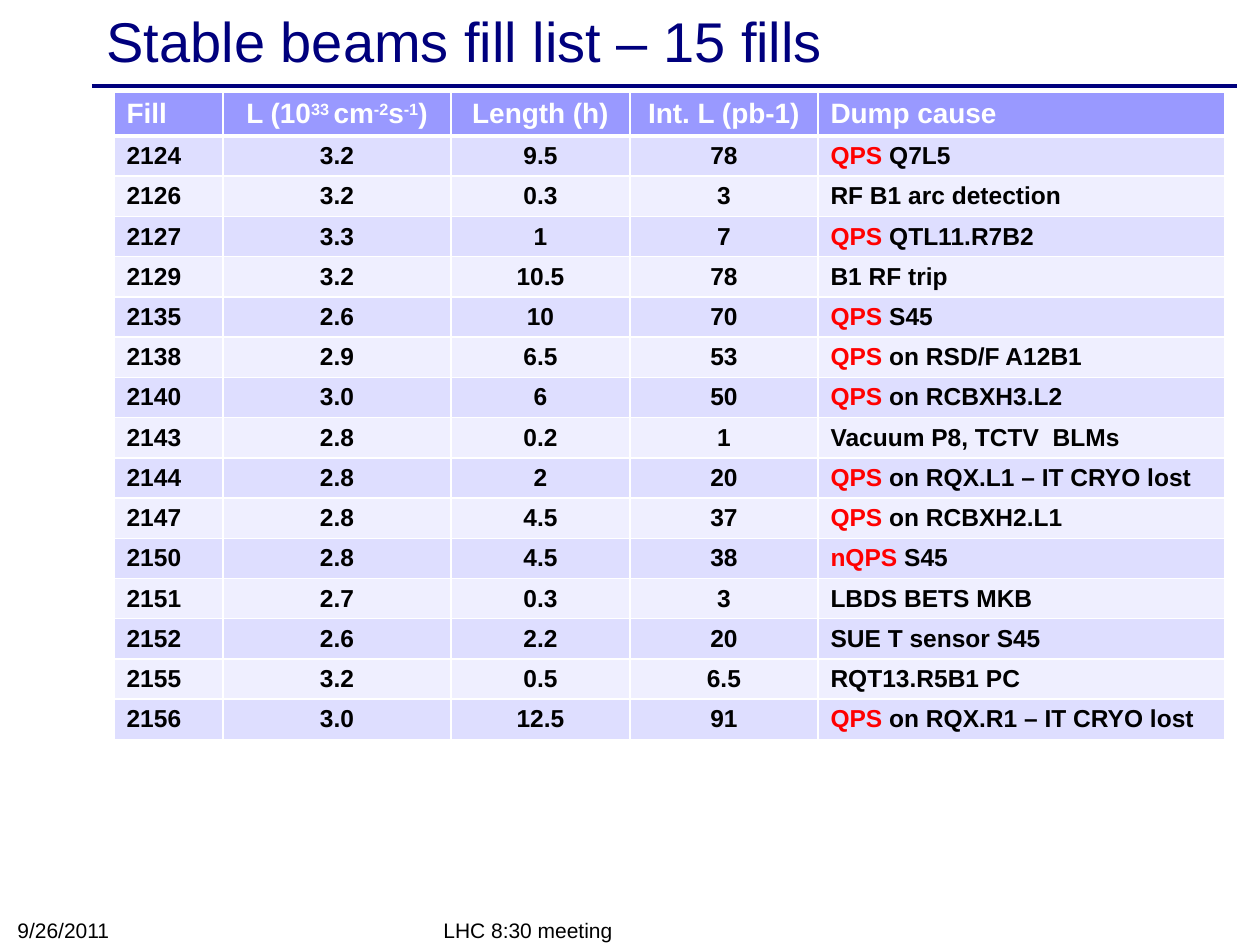
from lxml.etree import SubElement
from pptx import Presentation
from pptx.dml.color import RGBColor
from pptx.enum.shapes import MSO_CONNECTOR
from pptx.enum.text import MSO_ANCHOR, PP_ALIGN
from pptx.oxml.ns import qn
from pptx.util import Pt

PX = 914400 / 126
COLORS = {"navy": "00007D", "white": "FFFFFF", "black": "000000", "red": "FF0000",
          "header": "9999FF", "odd": "DEDEFF", "even": "EFEFFF"}
TITLE = {"size": Pt(32), "bold": False}
FOOTER = {"size": Pt(12), "bold": False}
HEADER = {"size": Pt(16), "bold": True}
BODY = {"size": Pt(14), "bold": True}

COLUMN_WIDTHS = [109, 228, 179, 188, 407]
ALIGNMENTS = [PP_ALIGN.LEFT] + [PP_ALIGN.CENTER] * 3 + [PP_ALIGN.LEFT]
HEADER_HEIGHT = 44
# Each heading is a list of (text, is superscript).
HEADINGS = [
    [("Fill", False)],
    [("L (10", False), ("33 ", True), ("cm", False), ("-2", True), ("s", False),
     ("-1", True), (")", False)],
    [("Length (h)", False)],
    [("Int. L (pb-1)", False)],
    [("Dump cause", False)],
]
FILLS = [
    ("2124", "3.2", "9.5", "78", "QPS Q7L5"),
    ("2126", "3.2", "0.3", "3", "RF B1 arc detection"),
    ("2127", "3.3", "1", "7", "QPS QTL11.R7B2"),
    ("2129", "3.2", "10.5", "78", "B1 RF trip"),
    ("2135", "2.6", "10", "70", "QPS S45"),
    ("2138", "2.9", "6.5", "53", "QPS on RSD/F A12B1"),
    ("2140", "3.0", "6", "50", "QPS on RCBXH3.L2"),
    ("2143", "2.8", "0.2", "1", "Vacuum P8, TCTV  BLMs"),
    ("2144", "2.8", "2", "20", "QPS on RQX.L1 – IT CRYO lost"),
    ("2147", "2.8", "4.5", "37", "QPS on RCBXH2.L1"),
    ("2150", "2.8", "4.5", "38", "nQPS S45"),
    ("2151", "2.7", "0.3", "3", "LBDS BETS MKB"),
    ("2152", "2.6", "2.2", "20", "SUE T sensor S45"),
    ("2155", "3.2", "0.5", "6.5", "RQT13.R5B1 PC"),
    ("2156", "3.0", "12.5", "91", "QPS on RQX.R1 – IT CRYO lost"),
]


def emu(px):
    return round(px * PX)


def rgb(name):
    return RGBColor.from_string(COLORS[name])


def add_run(p, text, style, color, superscript=False):
    r = p.add_run()
    r.text = text
    for name, value in {"name": "Arial", **style}.items():
        setattr(r.font, name, value)
    r.font.color.rgb = rgb(color)
    if superscript:
        r.font._element.set("baseline", "30000")


def add_title(s, text, x, y, w, h):
    """Place the title and the rule that runs below it."""
    sp = s.shapes.title
    for name, value in zip(("left", "top", "width", "height"), (x, y, w, h)):
        setattr(sp, name, emu(value))
    tf = sp.text_frame
    tf.word_wrap = True
    tf.vertical_anchor = MSO_ANCHOR.MIDDLE
    p = tf.paragraphs[0]
    p.alignment = PP_ALIGN.LEFT
    add_run(p, text, TITLE, "navy")

    rule_y = emu(y + h + 10)
    rule = s.shapes.add_connector(MSO_CONNECTOR.STRAIGHT, emu(x - 2), rule_y,
                                  emu(x + w + 9), rule_y)
    rule.line.color.rgb = rgb("navy")
    rule.line.width = Pt(2)
    SubElement(rule._element.spPr, qn("a:effectLst"))


def add_footer(s, text, x, y, w, h):
    sp = s.shapes.add_textbox(*map(emu, (x, y, w, h)))
    tf = sp.text_frame
    tf.word_wrap = True
    tf.vertical_anchor = MSO_ANCHOR.BOTTOM
    add_run(tf.paragraphs[0], text, FOOTER, "black")


def set_borders(cell, widths):
    """Draw white borders; widths gives points for each side."""
    tcPr = cell._tc.get_or_add_tcPr()
    for side in "LRTB":
        ln = SubElement(tcPr, qn(f"a:ln{side}"), w=str(Pt(widths.get(side, 1))))
        fill = SubElement(ln, qn("a:solidFill"))
        SubElement(fill, qn("a:srgbClr"), val=COLORS["white"])


def format_cell(cell, fill, alignment, borders):
    """Format the cell and return its paragraph."""
    set_borders(cell, borders)
    cell.fill.solid()
    cell.fill.fore_color.rgb = rgb(fill)
    cell.vertical_anchor = MSO_ANCHOR.MIDDLE
    cell.margin_top = cell.margin_bottom = emu(5)
    p = cell.text_frame.paragraphs[0]
    p.alignment = alignment
    return p


def add_fill_table(s, x, y, h):
    frame = s.shapes.add_table(len(FILLS) + 1, len(COLUMN_WIDTHS), emu(x), emu(y),
                               emu(sum(COLUMN_WIDTHS)), emu(h))
    table = frame.table
    for column, width in zip(table.columns, COLUMN_WIDTHS):
        column.width = emu(width)
    for i, row in enumerate(table.rows):
        row.height = emu((h - HEADER_HEIGHT) / len(FILLS) if i else HEADER_HEIGHT)

    for j, heading in enumerate(HEADINGS):
        p = format_cell(table.cell(0, j), "header", ALIGNMENTS[j], {"B": 3})
        for text, superscript in heading:
            add_run(p, text, HEADER, "white", superscript)

    for i, values in enumerate(FILLS, 1):
        for j, text in enumerate(values):
            p = format_cell(table.cell(i, j), "odd" if i % 2 else "even",
                            ALIGNMENTS[j], {"T": 3} if i == 1 else {})
            system, space, rest = text.partition(" ")
            if system.endswith("QPS"):
                add_run(p, system, BODY, "red")
                text = space + rest
            add_run(p, text, BODY, "black")


def main():
    prs = Presentation()
    prs.slide_width, prs.slide_height = emu(1260), emu(945)
    s = prs.slides.add_slide(prs.slide_layouts[5])
    add_title(s, "Stable beams fill list – 15 fills", 94, 4, 1134, 72)
    add_footer(s, "LHC 8:30 meeting", 431, 913, 399, 36)
    add_footer(s, "9/26/2011", 5, 913, 294, 36)
    add_fill_table(s, 114, 92, 648)
    prs.save("out.pptx")


if __name__ == "__main__":
    main()
